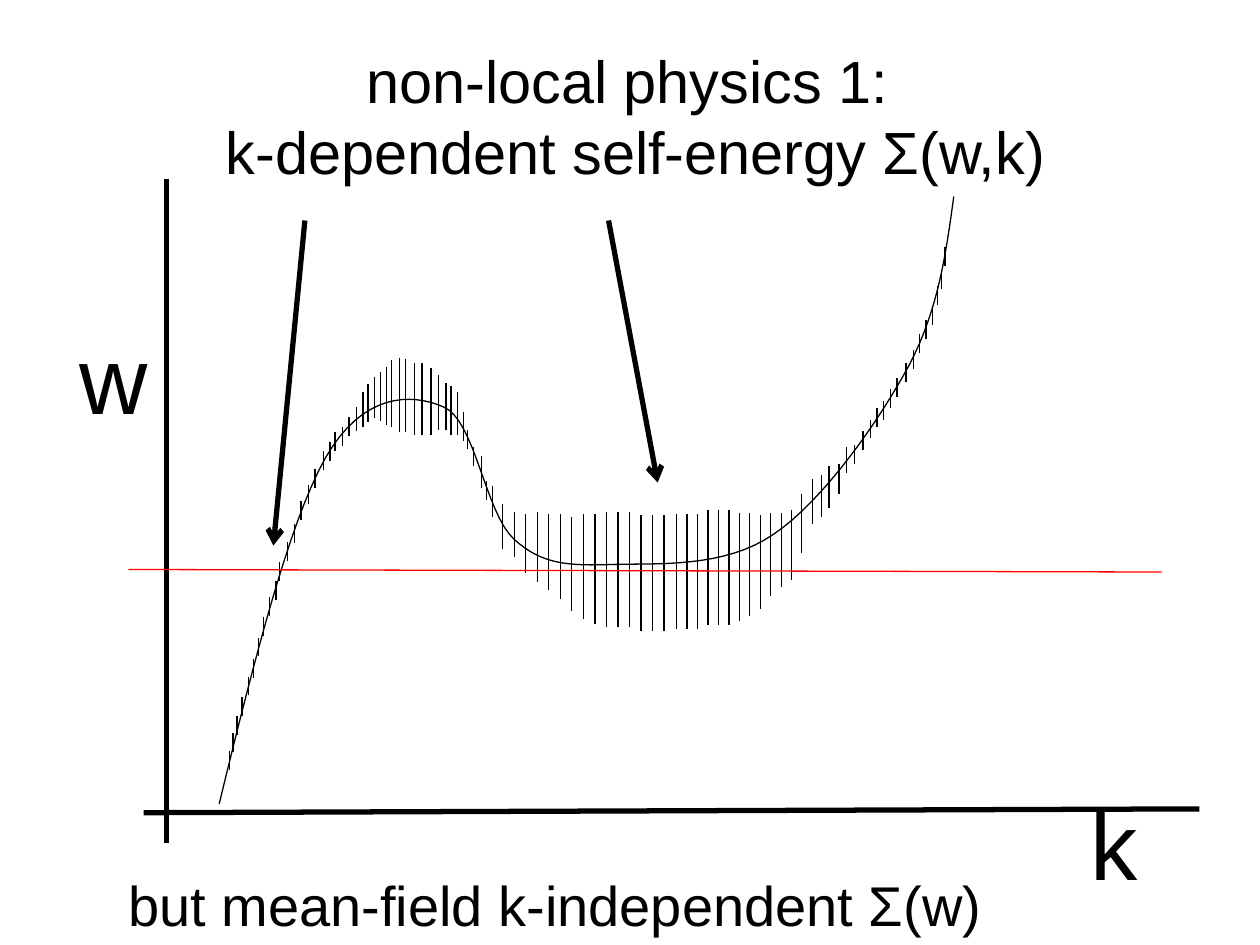
from dataclasses import dataclass

from lxml.etree import SubElement
from pptx import Presentation
from pptx.dml.color import RGBColor
from pptx.enum.shapes import MSO_CONNECTOR as Connector
from pptx.enum.text import MSO_ANCHOR as Anchor, MSO_AUTO_SIZE as AutoSize, PP_ALIGN as Align
from pptx.oxml.ns import qn
from pptx.util import Cm, Pt


@dataclass(frozen=True)
class Theme:
    ink: RGBColor = RGBColor(0, 0, 0)
    fermi: RGBColor = RGBColor(255, 0, 0)
    font: str = "Arial"
    title: float = 34
    note: float = 32
    axis: float = 54
    thin: float = 0.75
    thick: float = 3


@dataclass(frozen=True)
class Box:
    """A region in cm; points inside it are counted in units of 2.54 cm."""
    left: float
    top: float
    width: float
    height: float
    unit: float = 2.54

    def point(self, x, y):
        return Cm(self.left + x * self.unit), Cm(self.top + y * self.unit)

    def inner(self, x, y, width, height):
        return Box(self.left + x * self.unit, self.top + y * self.unit,
                   width * self.unit, height * self.unit)

    def frame(self):
        return dict(left=Cm(self.left), top=Cm(self.top),
                    width=Cm(self.width), height=Cm(self.height))


THEME = Theme()
SLIDE = Box(0, 0, 25.4, 19.05)

BAND_START = (1.74, 6.38)
BAND_CURVES = [
    ((2.01, 5.27), (2.29, 4.16), (2.58, 3.64)),
    ((2.88, 3.11), (3.27, 3.12), (3.52, 3.23)),
    ((3.77, 3.33), (3.85, 4.07), (4.08, 4.28)),
    ((4.31, 4.49), (4.53, 4.49), (4.87, 4.48)),
    ((5.22, 4.47), (5.75, 4.51), (6.14, 4.24)),
    ((6.53, 3.98), (6.98, 3.34), (7.22, 2.89)),
    ((7.45, 2.45), (7.51, 2.00), (7.57, 1.56)),
]

# Narrow broadening: x and lower end of bars of one height
NARROW = 0.15
NARROW_BARS = [
    (1.82, 6.11), (1.85, 5.97), (1.88, 5.83), (1.92, 5.68), (1.97, 5.52),
    (2.01, 5.38), (2.05, 5.21), (2.09, 5.05), (2.14, 4.89), (2.19, 4.76),
    (2.22, 4.61), (2.28, 4.45), (2.34, 4.31), (2.39, 4.13), (2.45, 4.00),
    (2.50, 3.87), (2.57, 3.73), (2.62, 3.66), (2.66, 3.58), (2.72, 3.54),
    (2.77, 3.46), (3.71, 3.56), (3.76, 3.70), (3.86, 3.97),
    (6.78, 3.68), (6.85, 3.57), (6.91, 3.48), (6.96, 3.39), (7.01, 3.33),
    (7.07, 3.24), (7.12, 3.15), (7.19, 3.03), (7.25, 2.93), (7.30, 2.80),
    (7.35, 2.69), (7.40, 2.58), (7.44, 2.42), (7.47, 2.29), (7.50, 2.11),
]
# Wide broadening: x, lower end, upper end
WIDE_BARS = [
    (2.83, 3.42, 3.23), (2.88, 3.39, 3.11), (2.92, 3.35, 3.05), (2.97, 3.32, 2.99),
    (3.02, 3.34, 2.95), (3.07, 3.37, 2.91), (3.11, 3.39, 2.86), (3.17, 3.43, 2.84),
    (3.22, 3.43, 2.85), (3.29, 3.45, 2.88), (3.35, 3.45, 2.88), (3.42, 3.45, 2.92),
    (3.48, 3.41, 2.98), (3.54, 3.41, 3.04), (3.58, 3.45, 3.06), (3.63, 3.45, 3.11),
    (3.68, 3.50, 3.27), (3.82, 3.87, 3.62), (3.91, 4.10, 3.86),
    (6.36, 4.39, 3.92), (6.45, 4.16, 3.80), (6.52, 4.10, 3.77), (6.58, 4.03, 3.70),
    (6.66, 3.92, 3.68), (6.72, 3.75, 3.55),
]
# Valley bars, from its middle outwards: lower end, upper end
VALLEY = [
    (5.01, 4.09), (5.01, 4.09), (5.01, 4.09), (4.98, 4.06), (4.98, 4.06),
    (4.98, 4.06), (4.95, 4.08), (4.91, 4.08), (4.85, 4.10), (4.75, 4.08),
    (4.68, 4.08), (4.62, 4.06), (4.55, 4.08), (4.42, 4.06), (4.36, 4.00),
]
RIGHT_COUNT = 12


def set_format(target, **values):
    for name, value in values.items():
        setattr(target, name, value)


def add_line(shapes, box, start, end, width, color=THEME.ink, arrow=False):
    line = shapes.add_connector(Connector.STRAIGHT, *box.point(*start), *box.point(*end))
    line.line.color.rgb = color
    line.line.width = Pt(width)
    if arrow:
        SubElement(line._element.spPr.find(qn("a:ln")), qn("a:tailEnd"), type="arrow")
    SubElement(line._element.spPr, qn("a:effectLst"))


def write(frame, text, size, align=Align.LEFT):
    frame.text = text
    paragraph = frame.paragraphs[0]
    paragraph.alignment = align
    set_format(paragraph.font, name=THEME.font, size=Pt(size))
    paragraph.font.color.rgb = THEME.ink


def add_label(shapes, box, text, size):
    label = shapes.add_textbox(**box.frame())
    set_format(label.text_frame, word_wrap=True, auto_size=AutoSize.SHAPE_TO_FIT_TEXT)
    write(label.text_frame, text, size)


def place_title(slide, box):
    title = slide.shapes.title
    set_format(title, **box.frame())
    set_format(title.text_frame, vertical_anchor=Anchor.MIDDLE, auto_size=AutoSize.NONE)
    write(title.text_frame, "non-local physics 1: \vk-dependent self-energy Σ(w,k)",
          THEME.title, Align.CENTER)


def bezier_points(start, curves, steps=16):
    for first, second, end in curves:
        for step in range(1, steps + 1):
            t = step / steps
            weights = ((1 - t) ** 3, 3 * t * (1 - t) ** 2, 3 * t ** 2 * (1 - t), t ** 3)
            knots = (start, first, second, end)
            yield tuple(sum(w * knot[axis] for w, knot in zip(weights, knots))
                        for axis in (0, 1))
        start = end


def add_band(shapes, box):
    builder = shapes.build_freeform(*box.point(*BAND_START))
    builder.add_line_segments(
        [box.point(*point) for point in bezier_points(BAND_START, BAND_CURVES)], close=False)
    band = builder.convert_to_shape()
    band.shadow.inherit = False
    band.fill.background()
    band.line.color.rgb = THEME.ink
    band.line.width = Pt(THEME.thin)


def broadening_bars():
    for x, low in NARROW_BARS:
        yield x, low, low - NARROW
    yield from WIDE_BARS
    for index, (low, high) in enumerate(VALLEY):
        yield 5.27 - index * 1.28 / 14, low, high
        if index < RIGHT_COUNT:
            yield 5.37 + index * 0.083, low - 0.02, high - 0.01


def draw_dispersion(slide, box):
    plot = slide.shapes.add_group_shape().shapes
    for x, low, high in broadening_bars():
        add_line(plot, box, (x, low), (x, high), THEME.thin)
    add_band(plot, box)
    add_line(plot, box, (1.32, 1.42), (1.32, 6.69), THEME.thick)
    add_line(plot, box, (1.14, 6.45), (9.52, 6.42), THEME.thick)
    add_label(plot, box.inner(0.53, 2.49, 1.36, 1.01), "w", THEME.axis)
    add_label(plot, box.inner(8.56, 6.19, 1.44, 1.4), "k", THEME.axis)


def annotate(slide, box):
    for start, end in (((2.42, 1.75), (2.17, 4.33)), ((4.83, 1.75), (5.22, 3.83))):
        add_line(slide.shapes, box, start, end, THEME.thick, arrow=True)
    add_line(slide.shapes, box, (1.02, 4.52), (9.22, 4.54), THEME.thin, THEME.fermi)
    add_label(slide.shapes, box.inner(0.92, 6.86, 7.5, 0.64),
              "but mean-field k-independent Σ(w)", THEME.note)


def main():
    deck = Presentation()
    set_format(deck, slide_width=Cm(SLIDE.width), slide_height=Cm(SLIDE.height))
    slide = deck.slides.add_slide(deck.slide_layouts.get_by_name("Title Only"))
    place_title(slide, SLIDE.inner(-0.33, -0.5, 10.75, 2.83))
    draw_dispersion(slide, SLIDE)
    annotate(slide, SLIDE)
    deck.save("out.pptx")


if __name__ == "__main__":
    main()
